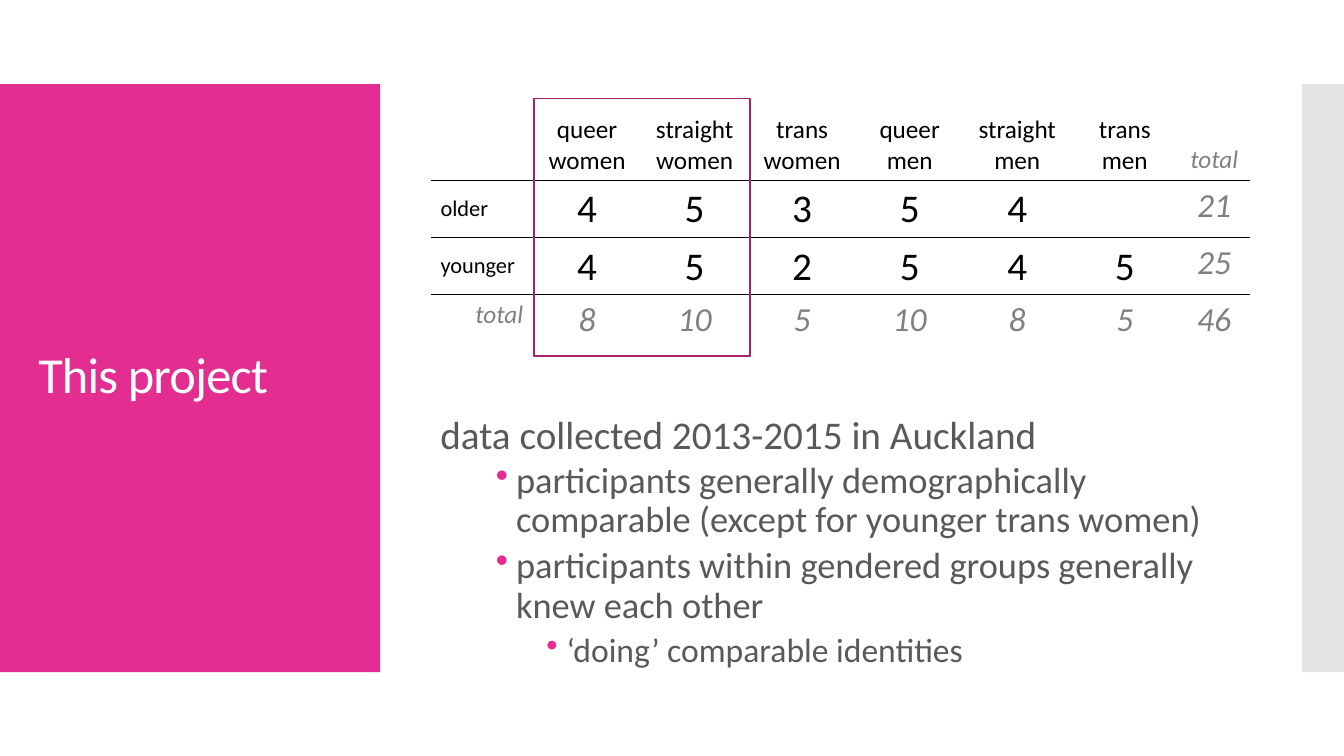
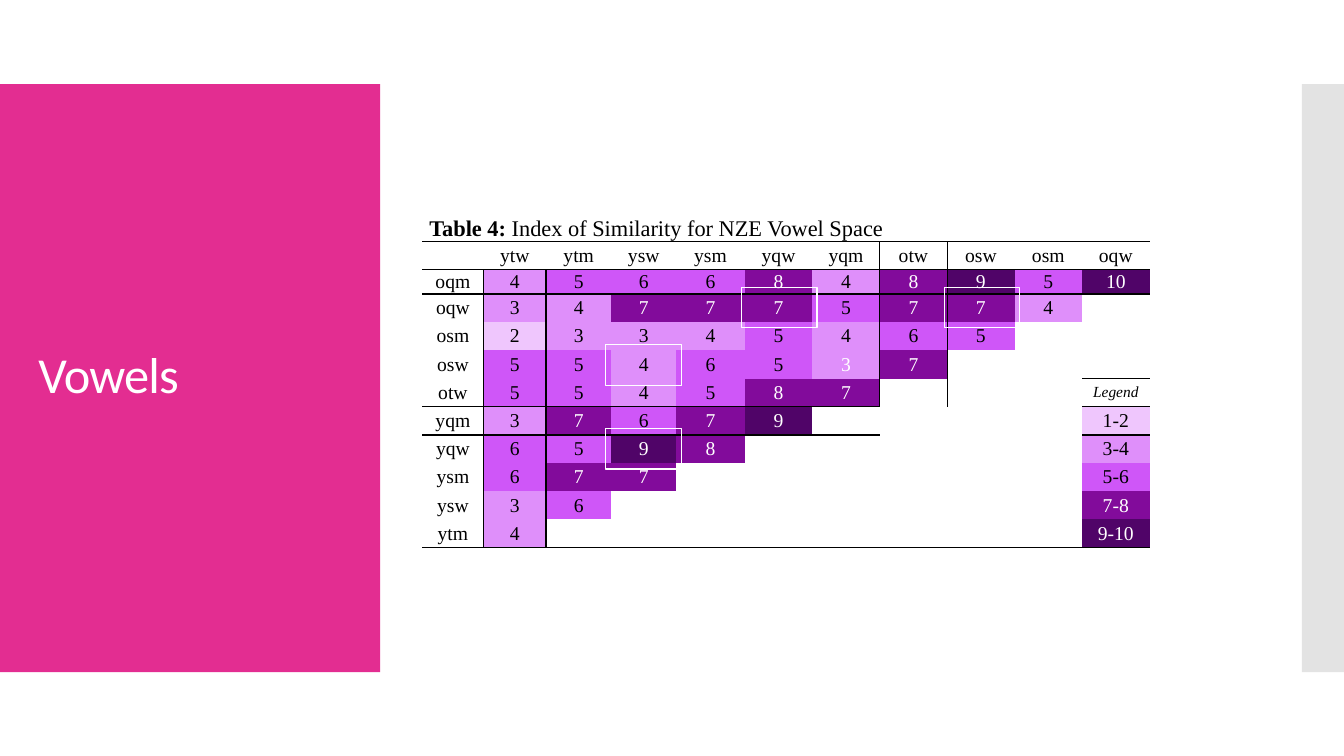
from lxml import etree
from pptx import Presentation
from pptx.dml.color import RGBColor
from pptx.enum.shapes import MSO_SHAPE as Shape
from pptx.enum.text import MSO_ANCHOR as Anchor, MSO_AUTO_SIZE as Auto, PP_ALIGN as Align
from pptx.oxml import parse_xml
from pptx.oxml.ns import nsdecls, qn
from pptx.util import Cm, Pt

rgb = RGBColor.from_string
PINK, BLACK, WHITE, GREY = "E32D91", "000000", "FFFFFF", "808080"
PLAIN = "{2D5ABB26-0587-4C30-8999-92F81FD0307C}"  # table style without grid


def write(par, text, colour=BLACK, name="Calibri", **form):
    run = par.add_run()
    run.text = text
    run.font.color.rgb = rgb(colour)
    for key, val in dict(form, name=name).items():
        setattr(run.font, key, val)
    return run


def edge(cell, sides):
    props = cell._tc.get_or_add_tcPr()
    for side in "BTRL":
        if side in sides:
            props.insert(0, parse_xml(
                f'<a:ln{side} {nsdecls("a")} w="12700"><a:solidFill>'
                f'<a:srgbClr val="{BLACK}"/></a:solidFill></a:ln{side}>'))


deck = Presentation()
deck.slide_width, deck.slide_height = Cm(33.87), Cm(19.05)
layout = deck.slide_layouts[5]
first, second = slides = [deck.slides.add_slide(layout) for _ in range(2)]

# Side bands, shared through the layout
for left, width, colour, alpha in ((0, 9.58, PINK, 100), (32.81, 1.06, "C8C8C8", 50)):
    band = first.shapes.add_shape(Shape.RECTANGLE, Cm(left), Cm(2.12), Cm(width), Cm(14.82))
    band.shadow.inherit = False
    band.fill.solid()
    band.fill.fore_color.rgb = rgb(colour)
    band.line.fill.background()
    tint = band.element.find(".//" + qn("a:srgbClr"))
    etree.SubElement(tint, qn("a:alpha"), val=str(alpha * 1000))
    layout.shapes.element.insert(2, band.element)

# Titles
for slide, text in zip(slides, ("This project", "Vowels")):
    title = slide.shapes.title
    place = dict(left=0.71, top=3.12, width=8.18, height=12.78)
    for key, val in place.items():
        setattr(title, key, Cm(val))
    frame = title.text_frame
    frame.auto_size, frame.vertical_anchor = Auto.NONE, Anchor.MIDDLE
    par = frame.paragraphs[0]
    par.alignment, par.line_spacing = Align.LEFT, 0.9
    run = write(par, text, WHITE, size=Pt(36))
    run._r.get_or_add_rPr().set("spc", "-60")

# Notes on the data
body = first.shapes.add_textbox(Cm(10.85), Cm(10.36), Cm(20.32), Cm(6.73)).text_frame
body.word_wrap = True
points = [
    (0, "data collected 2013-2015 in Auckland"),
    (1, "participants generally demographically comparable (except for younger trans women)"),
    (1, "participants within gendered groups generally knew each other"),
    (2, "‘doing’ comparable identities"),
]
for num, (level, text) in enumerate(points):
    par = body.add_paragraph() if num else body.paragraphs[0]
    par.level, par.line_spacing = level, 0.9
    par.space_before = Pt(2.5 if level else 12)
    write(par, text, "595959", size=Pt(28 - 2 * level))
    if level:
        par.space_after = Pt(2.5)
        props = par._p.get_or_add_pPr()
        props.set("marL", str(Cm(1.27 * level + 0.635)if level == 1 else Cm(3.18)))
        props.set("indent", str(-Cm(0.51)))
        tint = etree.SubElement(props, qn("a:buClr"))
        etree.SubElement(tint, qn("a:srgbClr"), val=PINK)
        etree.SubElement(props, qn("a:buChar"), char="•")

# Both tables: place, column widths, row heights
grids = []
for slide, left, top, wide, high in (
        (first, 10.85, 2.77, [2.59] + [2.71] * 6 + [1.8], [1.7, 1.37, 1.37, 1.22]),
        (second, 10.64, 5.38, [1.55, 1.57, 1.65, 1.63, 1.73] + [1.7] * 6,
         [0.71] * 2 + [0.61] + [0.71] * 9)):
    shape = slide.shapes.add_table(len(high), len(wide), Cm(left), Cm(top),
                                   Cm(sum(wide)), Cm(sum(high)))
    shape.element.find(".//" + qn("a:tableStyleId")).text = PLAIN
    grid = shape.table
    grid.first_row = grid.horz_banding = False
    for col, size in zip(grid.columns, wide):
        col.width = Cm(size)
    for row, size in zip(grid.rows, high):
        row.height = Cm(size)
    for cell in grid.iter_cells():
        cell.fill.background()
    grids.append(grid)
people, vowels = grids

# Participants by group and age
counts = [
    ["", "queer women", "straight women", "trans women", "queer men",
     "straight men", "trans men", "total"],
    ["older", "4", "5", "3", "5", "4", "", "21"],
    ["younger", "4", "5", "2", "5", "4", "5", "25"],
    ["total", "8", "10", "5", "10", "8", "5", "46"],
]
for row, line in enumerate(counts):
    for col, text in enumerate(line):
        cell = people.cell(row, col)
        edge(cell, ("T" if row else "") + ("B" if row < 3 else ""))
        par = cell.text_frame.paragraphs[0]
        par.alignment = Align.CENTER
        total = row == 3 or col == 7
        size = 24 if total else 28
        if row == 0 or (row == 3 and col == 0):
            size = 18
        if row == 0 and total:
            cell.vertical_anchor = Anchor.BOTTOM
        if col == 0:
            par.alignment = Align.RIGHT if total else Align.LEFT
            if not total:
                size, cell.vertical_anchor = 16, Anchor.MIDDLE
        if text:
            write(par, text, GREY if total else BLACK, size=Pt(size), italic=total)

# Similarity scores, a triangle with its legend
scale = ["EFC6FD", "DF8FFA", "CF56F8", "820B9B", "500468"]
scores = {
    "oqm": [4, 5, 6, 6, 8, 4, 8, 9, 5, 10],
    "oqw": [3, 4, 7, 7, 7, 5, 7, 7, 4],
    "osm": [2, 3, 3, 4, 5, 4, 6, 5],
    "osw": [5, 5, 4, 6, 5, 3, 7],
    "otw": [5, 5, 4, 5, 8, 7],
    "yqm": [3, 7, 6, 7, 9],
    "yqw": [6, 5, 9, 8],
    "ysm": [6, 7, 7],
    "ysw": [3, 6],
    "ytm": [4],
}
heads = ["ytw", "ytm", "ysw", "ysm", "yqw", "yqm", "otw", "osw", "osm", "oqw"]
words = {(1, col): text for col, text in enumerate(heads, 1)}
shades = {}
for row, (name, line) in enumerate(scores.items(), 2):
    words[row, 0] = name
    for col, score in enumerate(line, 1):
        words[row, col] = str(score)
        shades[row, col] = (score - 1) // 2
words[6, 10] = "Legend"
for step in range(5):
    words[7 + step, 10] = f"{2 * step + 1}-{2 * step + 2}"
    shades[7 + step, 10] = step

# Cells with a rule below or to the right
below = {(row, col) for row in (0, 1, 11) for col in range(11)}
below |= {(6, col) for col in range(7)} | {(5, 10), (6, 10)}
right = {(row, 0) for row in range(2, 12)} | {(row, 6) for row in range(1, 7)}

vowels.cell(0, 0).merge(vowels.cell(0, 10))
for row in range(12):
    for col in range(11):
        cell, spot = vowels.cell(row, col), (row, col)
        cell.margin_left = cell.margin_right = Cm(0.18)
        cell.margin_top = cell.margin_bottom = 0
        cell.vertical_anchor = Anchor.MIDDLE if row else Anchor.BOTTOM
        if spot in shades:
            cell.fill.solid()
            cell.fill.fore_color.rgb = rgb(scale[shades[spot]])
        rules = {"B": spot in below, "T": (row - 1, col) in below,
                 "R": spot in right, "L": (row, col - 1) in right}
        edge(cell, [side for side in rules if rules[side]])
        par = cell.text_frame.paragraphs[0]
        if spot in words:
            par.alignment = Align.CENTER
            legend = spot == (6, 10)
            pale = shades.get(spot, 0) > 2 or spot == (5, 6)
            write(par, words[spot], WHITE if pale else BLACK, "Times New Roman",
                  size=Pt(11 if legend else 14), italic=legend)
        elif row:
            etree.SubElement(par._p, qn("a:endParaRPr"), sz="1400")
par = vowels.cell(0, 0).text_frame.paragraphs[0]
for text, bold in (("Table 4:", True), (" Index of Similarity for NZE Vowel Space", False)):
    write(par, text, name="Times New Roman", size=Pt(16), bold=bold)

# Frames around the cells in focus
marks = [(first, 13.46, 2.49, 5.44, 6.48, "A8216B", 1)]
for left, top in ((15.27, 10.8), (23.8, 7.24), (15.27, 8.69), (18.69, 7.24)):
    marks.append((second, left, top, 1.9, 1.02, WHITE, 0.85))
for slide, left, top, width, height, colour, weight in marks:
    mark = slide.shapes.add_shape(Shape.RECTANGLE, Cm(left), Cm(top), Cm(width), Cm(height))
    mark.shadow.inherit = False
    mark.fill.background()
    mark.line.color.rgb, mark.line.width = rgb(colour), Pt(weight)

deck.save("out.pptx")
